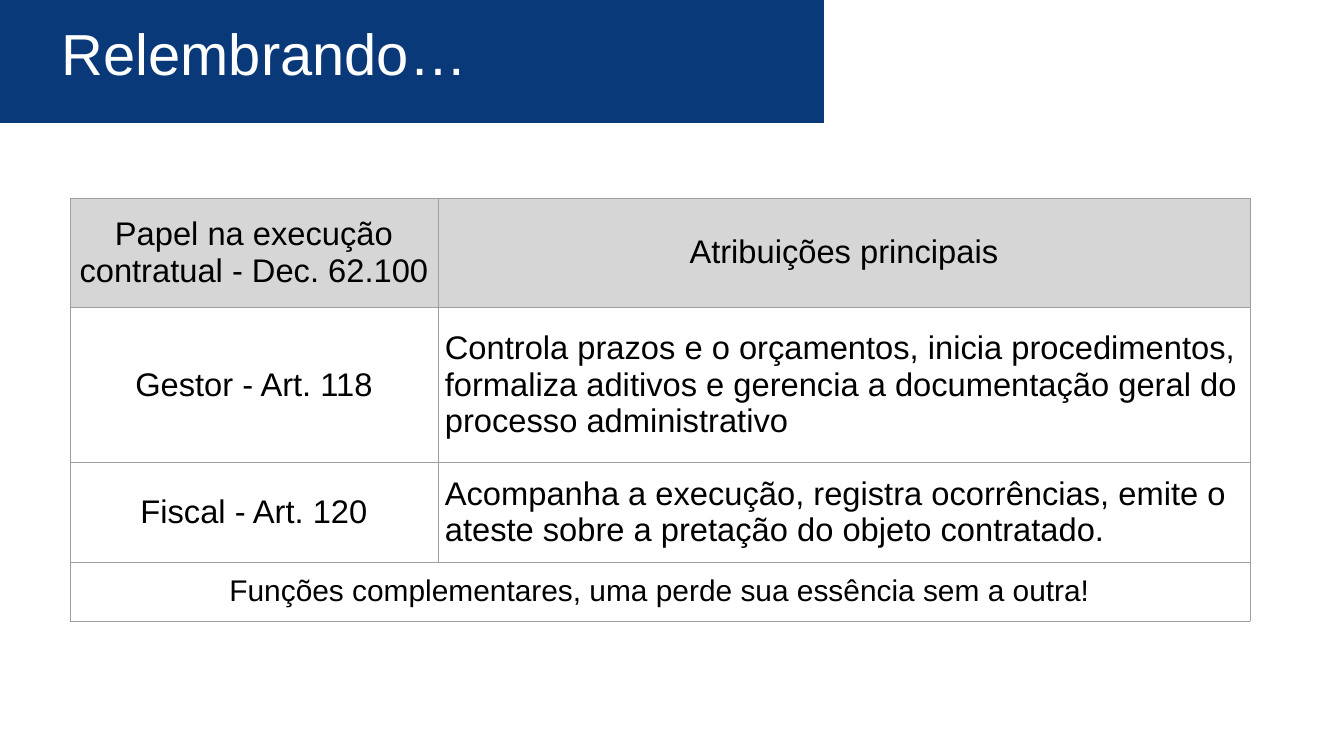
from lxml import etree
from pptx import Presentation
from pptx.dml.color import RGBColor
from pptx.enum import shapes, text
from pptx.oxml import ns
from pptx.util import Inches, Pt

COLORS = {
    "banner": "0A3979",
    "title": "FFFFFF",
    "header": "D6D6D6",
    "border": "9E9E9E",
    "text": "000000",
}
FONT = "Arial"
COLUMN_WIDTHS = [5.48, 12.08]
ROW_HEIGHTS = [1.62, 2.31, 1.49, 0.87]
ROWS = [
    ["Papel na execução contratual - Dec. 62.100", "Atribuições principais"],
    ["Gestor - Art. 118",
     "Controla prazos e o orçamentos, inicia procedimentos, formaliza aditivos "
     "e gerencia a documentação geral do processo administrativo"],
    ["Fiscal - Art. 120",
     "Acompanha a execução, registra ocorrências, emite o ateste sobre a "
     "pretação do objeto contratado."],
    ["Funções complementares, uma perde sua essência sem a outra!"],
]


def rgb(name):
    return RGBColor.from_string(COLORS[name])


def set_text(tf, content, size, color, align):
    tf.text = content
    tf.word_wrap = True
    p = tf.paragraphs[0]
    p.alignment = align
    r = p.runs[0]
    r.font.name = FONT
    r.font.size = Pt(size)
    r.font.color.rgb = rgb(color)


def set_borders(cell):
    tc_pr = cell._tc.get_or_add_tcPr()
    for side in ("lnL", "lnR", "lnT", "lnB"):
        ln = etree.SubElement(tc_pr, ns.qn(f"a:{side}"), w=str(Pt(0.75)))
        fill = etree.SubElement(ln, ns.qn("a:solidFill"))
        etree.SubElement(fill, ns.qn("a:srgbClr"), val=COLORS["border"])


def add_banner(s, left, top, width, height):
    sp = s.shapes.add_shape(
        shapes.MSO_SHAPE.RECTANGLE,
        Inches(left), Inches(top), Inches(width), Inches(height))
    sp.shadow.inherit = False
    sp.fill.solid()
    sp.fill.fore_color.rgb = rgb("banner")
    sp.line.fill.background()

    title = s.shapes.add_textbox(
        Inches(left + 0.82), Inches(top + 0.16), Inches(9.95), Inches(1.35))
    tf = title.text_frame
    tf.margin_left = tf.margin_right = Inches(0.1)
    tf.margin_top = tf.margin_bottom = Inches(0.1)
    set_text(tf, "Relembrando…", 62, "title", text.PP_ALIGN.LEFT)


def add_roles_table(s, left, top):
    table = s.shapes.add_table(
        len(ROW_HEIGHTS), len(COLUMN_WIDTHS), Inches(left), Inches(top),
        Inches(sum(COLUMN_WIDTHS)), Inches(sum(ROW_HEIGHTS))).table
    table.first_row = False
    table.horz_banding = False
    for column, width in zip(table.columns, COLUMN_WIDTHS):
        column.width = Inches(width)
    for row, height in zip(table.rows, ROW_HEIGHTS):
        row.height = Inches(height)

    for cell in table.iter_cells():
        cell.margin_left = cell.margin_right = Inches(0.1)
        cell.margin_top = cell.margin_bottom = Inches(0.1)
        cell.vertical_anchor = text.MSO_ANCHOR.MIDDLE
        set_borders(cell)
        cell.fill.background()
    for cell in table.rows[0].cells:
        cell.fill.solid()
        cell.fill.fore_color.rgb = rgb("header")

    last = len(ROWS) - 1
    table.cell(last, 0).merge(table.cell(last, 1))
    for i, row in enumerate(ROWS):
        for j, content in enumerate(row):
            is_description = 0 < i < last and j == 1
            align = text.PP_ALIGN.LEFT if is_description else text.PP_ALIGN.CENTER
            size = 32 if i == last else 35
            set_text(table.cell(i, j).text_frame, content, size, "text", align)


def main():
    prs = Presentation()
    prs.slide_width = Inches(20)
    prs.slide_height = Inches(11.25)
    s = prs.slides.add_slide(prs.slide_layouts[6])
    add_banner(s, 0, 0, 12.26, 1.83)
    add_roles_table(s, 1.04, 2.95)
    prs.save("out.pptx")


if __name__ == "__main__":
    main()
